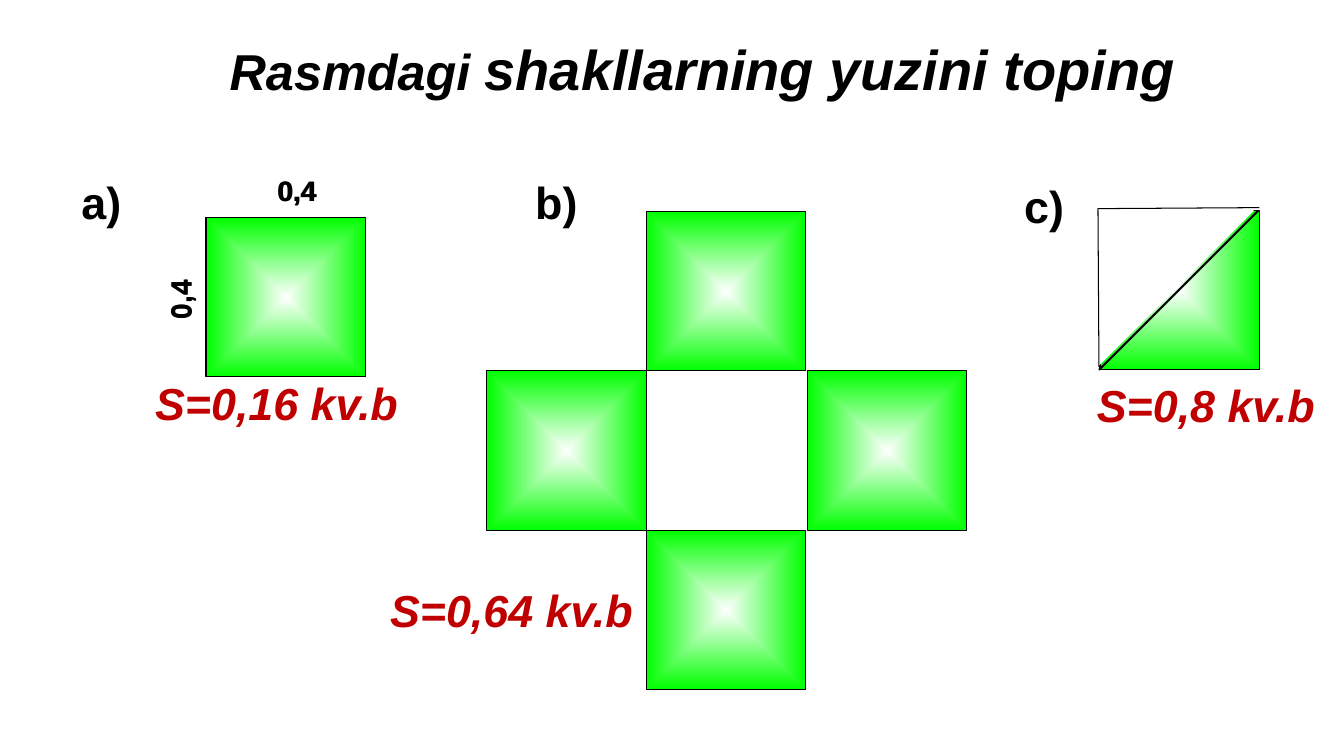
from dataclasses import dataclass

from lxml.etree import SubElement
from pptx import Presentation
from pptx.dml.color import RGBColor
from pptx.enum.shapes import MSO_CONNECTOR as CONNECTOR, MSO_SHAPE as SHAPE
from pptx.enum.text import MSO_AUTO_SIZE as AUTO_SIZE
from pptx.oxml.ns import qn
from pptx.shapes.autoshape import Shape
from pptx.shapes.shapetree import GroupShapes, SlideShapes
from pptx.util import Emu, Pt

PX = 9144  # 100 px to the inch
SIDE = 158  # side of every square
BLACK, WHITE, GREEN, RED = "000000", "FFFFFF", "00FF00", "C00000"

Shapes = SlideShapes | GroupShapes
Point = tuple[int, int]


@dataclass
class Label:
    text: str
    left: int
    top: int
    width: int
    height: int = 64
    size: int = 32
    color: str = BLACK
    italic: bool = False
    rotation: int = 0


def px(length: int) -> Emu:
    return Emu(length * PX)


def rgb(color: str) -> RGBColor:
    return RGBColor.from_string(color)


def add_label(shapes: Shapes, label: Label, wrap: bool = False) -> Shape:
    box = shapes.add_textbox(px(label.left), px(label.top), px(label.width), px(label.height))
    box.rotation = label.rotation
    frame = box.text_frame
    frame.text = label.text
    frame.word_wrap = wrap
    frame.auto_size = AUTO_SIZE.SHAPE_TO_FIT_TEXT
    style_run(frame.paragraphs[0].runs[0], label)
    return box


def style_run(run, label: Label) -> None:
    run.font.name = "Arial"
    run.font.size = Pt(label.size)
    run.font.bold = True
    run.font.italic = label.italic
    run.font.color.rgb = rgb(label.color)


def set_line(shape, color: str, width: float = 0.75) -> None:
    shape.line.color.rgb = rgb(color)
    shape.line.width = Pt(width)


def add_square(shapes: Shapes, left: int, top: int) -> None:
    square = shapes.add_shape(SHAPE.RECTANGLE, px(left), px(top), px(SIDE), px(SIDE))
    square.shadow.inherit = False
    set_line(square, BLACK)
    square.fill.gradient()
    for stop, color in zip(square.fill.gradient_stops, (WHITE, GREEN)):
        stop.color.rgb = rgb(color)
    # Spread the gradient from the centre to the edges
    gradient = square._element.spPr.find(qn("a:gradFill"))
    gradient.remove(gradient.find(qn("a:lin")))
    spread = SubElement(gradient, qn("a:path"), {"path": "shape"})
    SubElement(spread, qn("a:fillToRect"), {edge: "50000" for edge in "ltrb"})


def add_outline(shapes: Shapes, points: list[Point], line: str, fill: str | None = None) -> None:
    (start_x, start_y), *rest = [(px(x), px(y)) for x, y in points]
    builder = shapes.build_freeform(start_x, start_y)
    builder.add_line_segments(rest, close=fill is not None)
    outline = builder.convert_to_shape()
    outline.shadow.inherit = False
    set_line(outline, line)
    if fill:
        outline.fill.solid()
        outline.fill.fore_color.rgb = rgb(fill)
    else:
        outline.fill.background()


def add_diagonal(shapes: Shapes, start: Point, end: Point) -> None:
    diagonal = shapes.add_connector(CONNECTOR.STRAIGHT, *(px(n) for n in start + end))
    set_line(diagonal, BLACK, 1.5)
    SubElement(diagonal._element.spPr, qn("a:effectLst"))


def add_title(shapes: Shapes) -> None:
    opening = Label(" Rasmdagi ", 204, 29, 1101, 77, size=36, italic=True)
    title = add_label(shapes, opening, wrap=True)
    paragraph = title.text_frame.paragraphs[0]
    ending = paragraph.add_run()
    ending.text = "shakllarning yuzini toping"
    style_run(ending, opening)
    ending.font.size = Pt(40)
    indent = paragraph._p.get_or_add_pPr()
    indent.set("marL", str(px(38)))
    indent.set("indent", str(px(-38)))


LETTERS = [
    Label("a)", 71, 168, 72),
    Label("b)", 521, 168, 75),
    Label("c)", 1006, 172, 72),
]
AREAS = [
    Label("S=0,16 kv.b", 144, 368, 263, color=RED, italic=True),
    Label("S=0,64 kv.b", 377, 573, 263, color=RED, italic=True),
    Label("S=0,8 kv.b", 1078, 370, 238, color=RED, italic=True),
]
CROSS = [(483, 368), (641, 210), (641, 526), (801, 368)]


def main() -> None:
    deck = Presentation()
    deck.slide_width, deck.slide_height = px(1333), px(750)
    shapes = deck.slides.add_slide(deck.slide_layouts[6]).shapes

    add_title(shapes)

    # a) square with its side lengths, doubled one px apart
    for shift in (0, 1):
        add_square(shapes, 204 + shift, 216)
        add_label(shapes, Label("0,4", 265 + shift, 167, 67, 44, size=20))
        add_label(shapes, Label("0,4", 145 + shift, 271, 67, 44, size=20, rotation=270))

    # b) cross of four squares
    cross = shapes.add_group_shape().shapes
    for left, top in CROSS:
        add_square(cross, left, top)

    # c) square with its upper half covered
    add_square(shapes, 1091, 209)
    half = shapes.add_group_shape().shapes
    add_outline(half, [(1085, 367), (1243, 209), (1085, 209)], WHITE, fill=WHITE)
    add_diagonal(half, (1248, 209), (1090, 367))
    add_outline(shapes, [(1249, 206), (1089, 207), (1090, 364)], BLACK)

    # Letters and areas
    for label in LETTERS + AREAS:
        add_label(shapes, label)

    deck.save("out.pptx")


if __name__ == "__main__":
    main()
